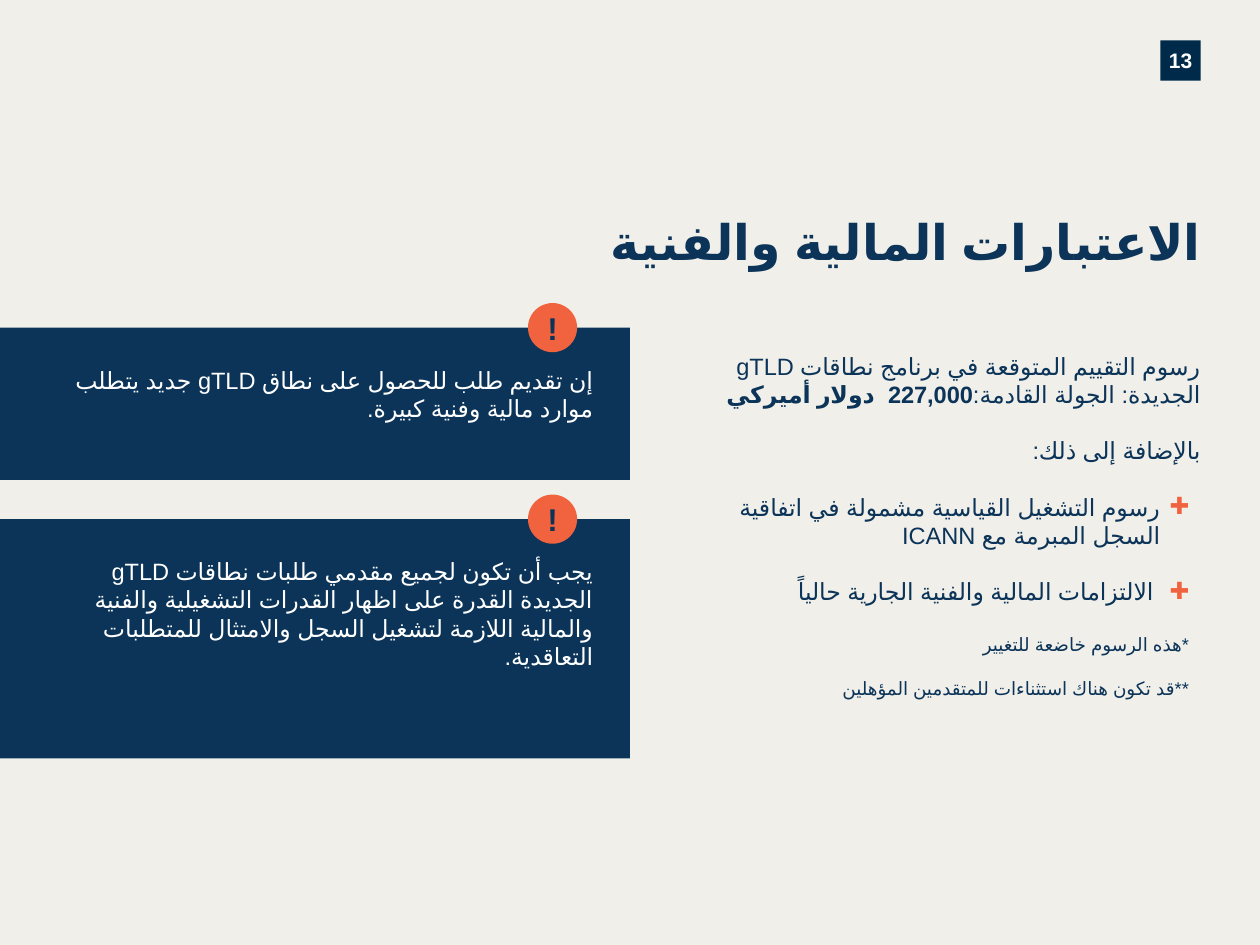
"""Build the slide on the financial and technical considerations of a gTLD application."""
from lxml import etree
from pptx import Presentation, util as u
from pptx.dml import color
from pptx.enum import shapes, text
from pptx.oxml import ns

NAVY, DARK, ORANGE, WHITE, CREAM = "0B3458", "002A49", "F1633E", "FFFFFF", "F1EFEA"
FONT = "Arial"
BODY, NOTE = 13.5, 10.5
EDGE = 0.09

NUMBER = "13"
TITLE = "الاعتبارات المالية والفنية"
WARNINGS = [
    (2.6, 1.21, "إن تقديم طلب للحصول على نطاق gTLD جديد يتطلب موارد مالية وفنية كبيرة."),
    (4.12, 1.9, "يجب أن تكون لجميع مقدمي طلبات نطاقات gTLD الجديدة القدرة على اظهار القدرات "
                "التشغيلية والفنية والمالية اللازمة لتشغيل السجل والامتثال للمتطلبات التعاقدية."),
]
FEE_INTRO = "رسوم التقييم المتوقعة في برنامج نطاقات gTLD الجديدة: الجولة القادمة:"
FEE = "227,000  دولار أميركي"
FEES = [
    {"spans": [(FEE_INTRO, False), (FEE, True)]},
    {"spans": [("بالإضافة إلى ذلك:", False)], "before": 16},
    {"spans": [("رسوم التشغيل القياسية مشمولة في اتفاقية السجل المبرمة مع ICANN", False)],
     "before": 16, "bullet": "✚", "margin": 0.32},
    {"spans": [("الالتزامات المالية والفنية الجارية حالياً", False)],
     "before": 16, "bullet": "✚", "margin": 0.37},
    {"spans": [("*هذه الرسوم خاضعة للتغيير", False)], "before": 16, "size": NOTE, "margin": EDGE},
    {"spans": [("**قد تكون هناك استثناءات للمتقدمين المؤهلين", False)],
     "before": 12.5, "size": NOTE, "margin": EDGE},
]
PANEL_WIDTH, BADGE, BADGE_LEFT = 5, 0.39, 4.19
PANEL_INSETS = (0.5, 0.3, 0.29, 0.22)
RIGHT, CENTER = text.PP_ALIGN.RIGHT, text.PP_ALIGN.CENTER
TOP, MIDDLE = text.MSO_ANCHOR.TOP, text.MSO_ANCHOR.MIDDLE


def rgb(value):
    return color.RGBColor.from_string(value)


def add_box(page, place, fill=None, kind=shapes.MSO_SHAPE.RECTANGLE, insets=(0, 0, 0, 0), anchor=TOP):
    place = [u.Inches(length) for length in place]
    if fill:
        box = page.shapes.add_shape(kind, *place)
        box.shadow.inherit = False
        box.fill.solid()
        box.fill.fore_color.rgb = rgb(fill)
        box.line.fill.background()
    else:
        box = page.shapes.add_textbox(*place)
    frame = box.text_frame
    formats = {"word_wrap": True, "vertical_anchor": anchor}
    for side, inset in zip(("left", "top", "right", "bottom"), insets):
        formats["margin_" + side] = u.Inches(inset)
    for name, value in formats.items():
        setattr(frame, name, value)
    return frame


def write(para, spans, size, ink, align=RIGHT, rtl=True, before=0, bullet=None, margin=0):
    properties = para._p.get_or_add_pPr()
    if rtl:
        properties.set("rtl", "1")
    properties.set("marL", str(u.Inches(margin)))
    properties.set("indent", str(u.Inches(EDGE - margin) if bullet else 0))
    if bullet:
        tint = etree.SubElement(properties, ns.qn("a:buClr"))
        etree.SubElement(tint, ns.qn("a:srgbClr"), val=ORANGE)
        etree.SubElement(properties, ns.qn("a:buFont"), typeface=FONT)
        etree.SubElement(properties, ns.qn("a:buChar"), char=bullet)
    para.alignment = align
    if before:
        para.space_before = u.Pt(before)
    for words, bold in spans:
        span = para.add_run()
        span.text = words
        for name, value in {"name": FONT, "size": u.Pt(size), "bold": bold}.items():
            setattr(span.font, name, value)
        span.font.color.rgb = rgb(ink)
        if rtl:
            letters = span._r.get_or_add_rPr()
            letters.set("lang", "ar")
            etree.SubElement(letters, ns.qn("a:cs"), typeface=FONT)


def main():
    deck = Presentation()
    deck.slide_width, deck.slide_height = u.Inches(10), u.Inches(7.5)
    page = deck.slides.add_slide(deck.slide_layouts[6])
    page.background.fill.solid()
    page.background.fill.fore_color.rgb = rgb(CREAM)

    number = add_box(page, (9.21, 0.32, 0.32, 0.32), DARK, anchor=MIDDLE)
    write(number.paragraphs[0], [(NUMBER, True)], 12, WHITE, CENTER, rtl=False)
    title = add_box(page, (0.42, 1.68, 9.11, 0.82))
    write(title.paragraphs[0], [(TITLE, True)], 28, NAVY)

    for top, height, words in WARNINGS:
        panel = add_box(page, (0, top, PANEL_WIDTH, height), NAVY, insets=PANEL_INSETS)
        write(panel.paragraphs[0], [(words, False)], BODY, WHITE)
        badge = add_box(page, (BADGE_LEFT, top - BADGE / 2, BADGE, BADGE), ORANGE,
                        shapes.MSO_SHAPE.OVAL, (0.07, 0.04, 0.07, 0.04), MIDDLE)
        write(badge.paragraphs[0], [("!", True)], 18, NAVY, CENTER)

    fees = add_box(page, (5.7, 2.79, 3.83, 3.2))
    for index, item in enumerate(FEES):
        para = fees.add_paragraph() if index else fees.paragraphs[0]
        write(para, **{"size": BODY, "ink": NAVY, **item})

    deck.save("out.pptx")


if __name__ == "__main__":
    main()
